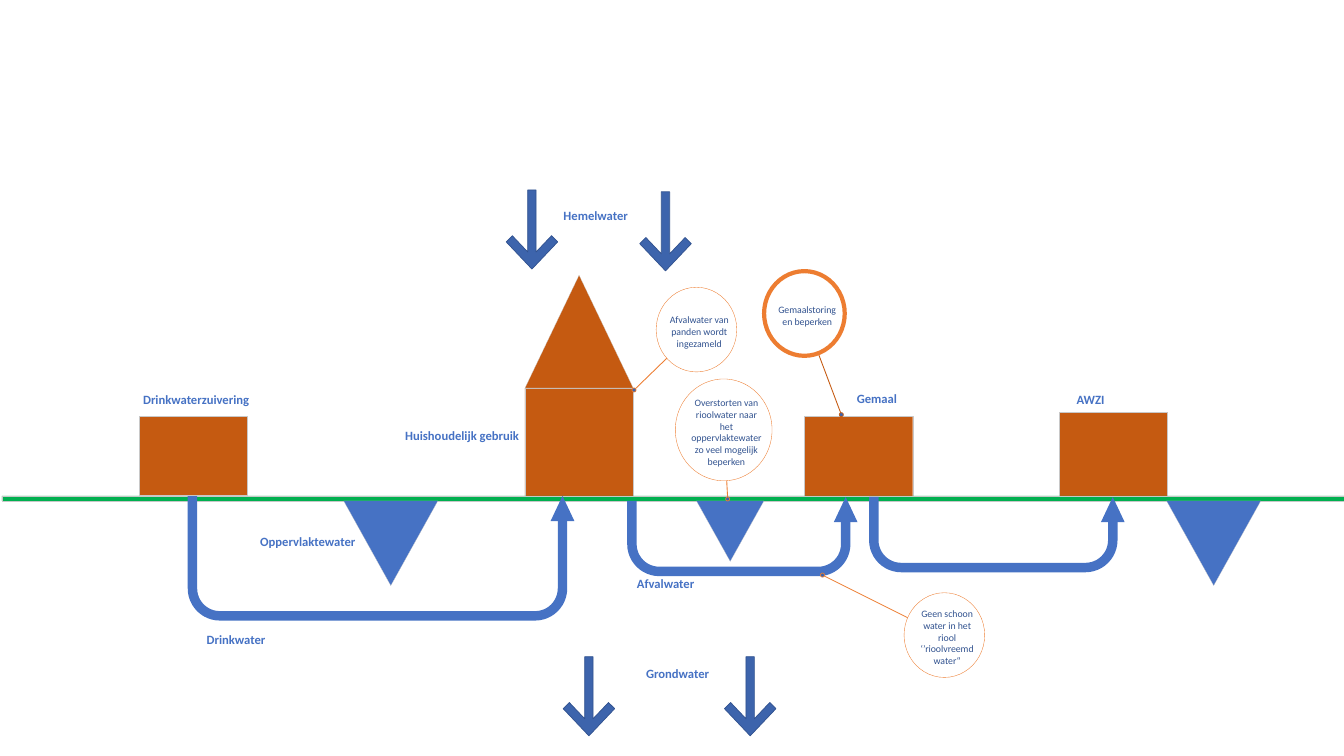
import math

import pptx
import pptx.dml.color
import pptx.enum.shapes
import pptx.enum.text
import pptx.oxml
import pptx.oxml.ns
import pptx.util

Pt = pptx.util.Pt
SHAPE = pptx.enum.shapes.MSO_SHAPE
ALIGN = pptx.enum.text.PP_ALIGN

COLOURS = {
    "building": "C55A11", "edge": "C8C8C8", "ground": "00B050",
    "water": "4672C4", "arrow": "3D64AC", "navy": "31528F",
    "callout": "ED7D31", "white": "FFFFFF",
}
FONT = "Calibri"

# left, top, width, height
HOUSE = (375, 277.2, 77.3, 80.6)
ROOF = (375, 196.6, 77.3, 80.6)
TREATMENT = (99.4, 297.4, 77.3, 56.2)
STATIONS = [(756.7, 294.5, 77.3, 60.5), (574.6, 297.4, 77.3, 60.5)]
GROUND = (1.4, 354.2, 958.6, 3.6)
SURFACE_WATERS = [
    (245.5, 357.8, 67.3, 60.5),
    (833.3, 357.8, 67.3, 60.5),
    (497.5, 357.8, 48.2, 43.2),
]

# start x, start y, bottom y, end x, y of the arrow tip
PIPES = [
    (451.4, 357.8, 408.2, 604.1, 355),
    (624.2, 355, 405.4, 794.9, 355),
    (137.5, 354.2, 439.9, 401.8, 354.2),
]
BEND_RADIUS = 19.5
HEAD_WIDTH, HEAD_HEIGHT = 17, 18

ARROW_TIPS = [(380, 192.2), (475.4, 193.5), (420.7, 525.6), (535.9, 525.6)]
ARROW_HALF = [(18.4, -19.4), (14, -23.8), (3, -12.2), (3, -56.5)]

# text, left, top, width
LABELS = [
    ("Hemelwater", 402.5, 148.3, 49),
    ("Huishoudelijk gebruik", 289.4, 305.3, 82.8),
    ("Oppervlaktewater", 185.8, 381.6, 70.6),
    ("Grondwater", 461.5, 475.9, 48.2),
    ("Afvalwater", 455, 411.1, 43.9),
    ("Gemaal", 612, 279.4, 31.7),
    ("Drinkwater", 147.6, 451.4, 45.4),
    ("AWZI", 769, 280.1, 23.8),
    ("Drinkwaterzuivering", 102.2, 280.1, 77.8),
]

# lines, circle, dot centre, leader end, leader colour, ring width
CALLOUTS = [
    (["Gemaalstoring", "en beperken"], (545.8, 193.7, 57.6, 60.5),
     (601, 296.2), (584.6, 252.7), "building", 3),
    (["Overstorten van", "rioolwater naar", "het", "oppervlaktewater",
      "zo veel mogelijk", "beperken"], (482.4, 270.7, 69.1, 72.7),
     (519.8, 356.4), (519.1, 343.4), "callout", 0.25),
    (["Geen schoon", "water in het", "riool", "‘’rioolvreemd", "water“"],
     (645.8, 423.4, 57.6, 60.5),
     (587.5, 410.8), (648.7, 441.4), "callout", 0.25),
    (["Afvalwater van", "panden wordt", "ingezameld"],
     (468.7, 205.2, 57.6, 60.5),
     (452.9, 278.6), (476.6, 255.6), "callout", 0.25),
]
DOT_SIZE = 2.9

deck = pptx.Presentation()
deck.slide_width, deck.slide_height = Pt(960), Pt(540)
page = deck.slides.add_slide(deck.slide_layouts[6])


def rgb(name):
    return pptx.dml.color.RGBColor.from_string(COLOURS[name])


def paint(shape, fill=None, line=None, width=0.13):
    shape.shadow.inherit = False
    if fill:
        shape.fill.solid()
        shape.fill.fore_color.rgb = rgb(fill)
    else:
        shape.fill.background()
    if line:
        shape.line.color.rgb = rgb(line)
        shape.line.width = Pt(width)
    else:
        shape.line.fill.background()
    return shape


def add_preset(kind, box, **look):
    return paint(page.shapes.add_shape(kind, *map(Pt, box)), **look)


def add_outline(points, close, **look):
    points = [(Pt(x), Pt(y)) for x, y in points]
    builder = page.shapes.build_freeform(*points[0], scale=1.0)
    builder.add_line_segments(points[1:], close=close)
    return paint(builder.convert_to_shape(), **look)


def write(frame, text, size, colour, bold=False, align=ALIGN.LEFT, left=0, top=0):
    frame.word_wrap = False
    frame.margin_left, frame.margin_top = Pt(left), Pt(top)
    frame.margin_right = frame.margin_bottom = 0
    para = frame.paragraphs[0]
    para.alignment = align
    for number, line in enumerate(text.split("\n")):
        if number:
            para.add_line_break()
        span = para.add_run()
        span.text = line
        span.font.name, span.font.size, span.font.bold = FONT, Pt(size), bold
        span.font.color.rgb = rgb(colour)


def bend(x, y, first, last):
    """Points of a quarter circle round (x, y), between two angles in degrees."""
    angles = [math.radians(first + (last - first) * step / 12) for step in range(13)]
    return [(x + BEND_RADIUS * math.cos(a), y + BEND_RADIUS * math.sin(a)) for a in angles]


def add_pipe(start, top, bottom, end, tip):
    centre = bottom - BEND_RADIUS
    route = [(start, top)]
    route += bend(start + BEND_RADIUS, centre, 180, 90)
    route += bend(end - BEND_RADIUS, centre, 90, 0)
    route.append((end, tip + HEAD_HEIGHT - 2))
    add_outline(route, False, line="water", width=6.75)
    head = (end - HEAD_WIDTH / 2, tip, HEAD_WIDTH, HEAD_HEIGHT)
    add_preset(SHAPE.ISOSCELES_TRIANGLE, head, fill="water")


def add_callout(lines, circle, dot, end, colour, ring):
    leader = page.shapes.add_connector(
        pptx.enum.shapes.MSO_CONNECTOR.STRAIGHT, *map(Pt, dot + end))
    leader.line.color.rgb = rgb(colour)
    leader.line.width = Pt(0.63)
    leader._element.spPr.append(pptx.oxml.parse_xml(
        f"<a:effectLst {pptx.oxml.ns.nsdecls('a')}/>"))
    dot_box = (dot[0] - DOT_SIZE / 2, dot[1] - DOT_SIZE / 2, DOT_SIZE, DOT_SIZE)
    add_preset(SHAPE.OVAL, dot_box, fill="arrow", line=colour, width=0.5)
    bubble = add_preset(SHAPE.OVAL, circle, fill="white", line="callout", width=ring)
    bubble.text_frame.vertical_anchor = pptx.enum.text.MSO_ANCHOR.MIDDLE
    write(bubble.text_frame, "\n".join(lines), 7, "navy",
          align=ALIGN.CENTER, left=4, top=3)


for building in [HOUSE, *STATIONS]:
    add_preset(SHAPE.RECTANGLE, building, fill="building", line="edge")
add_preset(SHAPE.ISOSCELES_TRIANGLE, ROOF, fill="building", line="edge")
add_preset(SHAPE.RECTANGLE, GROUND, fill="ground", line="edge")
for water in SURFACE_WATERS:
    add_preset(SHAPE.FLOWCHART_MERGE, water, fill="water", line="edge")
for pipe in PIPES:
    add_pipe(*pipe)
add_preset(SHAPE.RECTANGLE, TREATMENT, fill="building", line="edge")

arrow_outline = [(0, 0), *ARROW_HALF, *[(-x, y) for x, y in reversed(ARROW_HALF)]]
for tip_x, tip_y in ARROW_TIPS:
    add_outline([(tip_x + x, tip_y + y) for x, y in arrow_outline], True,
                fill="arrow", line="navy", width=0.5)

for text, left, top, width in LABELS:
    label = page.shapes.add_textbox(Pt(left), Pt(top), Pt(width), Pt(13.7))
    label.text_frame.auto_size = pptx.enum.text.MSO_AUTO_SIZE.SHAPE_TO_FIT_TEXT
    write(label.text_frame, text, 9, "water", bold=True)
for callout in CALLOUTS:
    add_callout(*callout)

deck.save("out.pptx")
